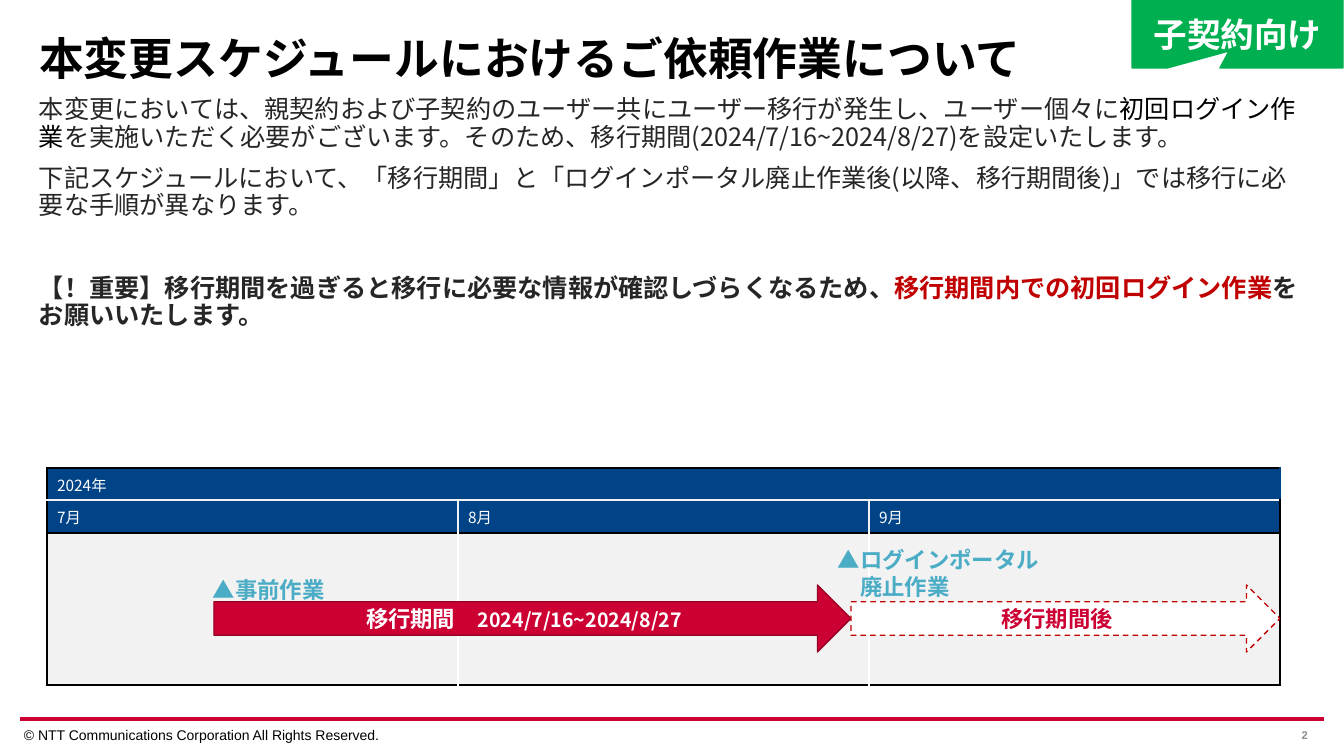
from lxml import etree
from pptx import Presentation
from pptx.dml.color import RGBColor
from pptx.enum.dml import MSO_LINE
from pptx.enum.shapes import MSO_CONNECTOR, MSO_SHAPE
from pptx.enum.text import MSO_ANCHOR, PP_ALIGN
from pptx.oxml.ns import qn
from pptx.util import Emu, Pt

PX = 914400 / 100.8
LEFT, CENTER, RIGHT = PP_ALIGN.LEFT, PP_ALIGN.CENTER, PP_ALIGN.RIGHT
TOP, MIDDLE = MSO_ANCHOR.TOP, MSO_ANCHOR.MIDDLE
ARROW, CALLOUT = MSO_SHAPE.RIGHT_ARROW, MSO_SHAPE.RECTANGULAR_CALLOUT
JP, LATIN = "Noto Sans CJK JP", "Arial"
BLACK, WHITE, GRAY, INK = "000000", "FFFFFF", "F2F2F2", "262626"
RED, DARK_RED, CRIMSON, BLUE, CYAN, GREEN = (
    "C00000", "970026", "CC0033", "004386", "4BACC6", "00B050")

# A span is (text, size, colour, bold).
TITLE = [[("本変更スケジュールにおけるご依頼作業について", 32, BLACK, True)]]
BODY = [
    [("本変更においては、親契約および子契約のユーザー共にユーザー移行が発生し、ユーザー個々に", 18, INK, False),
     ("初回ログイン作業", 18, BLACK, False),
     ("を実施いただく必要がございます。そのため、移行期間(2024/7/16~2024/8/27)を設定いたします。", 18, INK, False)],
    [("下記スケジュールにおいて、「移行期間」と「ログインポータル廃止作業後(以降、移行期間後)」"
      "では移行に必要な手順が異なります。", 18, INK, False)],
    [("【！重要】移行期間を過ぎると移行に必要な情報が確認しづらくなるため、", 18, INK, True),
     ("移行期間内での初回ログイン作業", 18, RED, True),
     ("をお願いいたします。", 18, INK, True)],
]
BODY_GAPS = [0, 10, 40]
YEAR, MONTHS = "2024年", ["7月", "8月", "9月"]
CALENDAR = (47, 468, 1233)
ROW_HEIGHTS = [32, 33, 152]

# preset, box, fill, line, dash, adjustments, spans
SHAPES = {
    "period": (ARROW, (214, 585, 637, 67), CRIMSON, DARK_RED, None, [],
               [("移行期間　", 16, WHITE, True), ("2024/7/16~2024/8/27", 14, WHITE, True)]),
    "after": (ARROW, (851, 585, 429, 67), WHITE, RED, MSO_LINE.DASH, [],
              [("移行期間後", 16, CRIMSON, True)]),
    "audience": (CALLOUT, (1132, 0, 211, 68), GREEN, GREEN, None, [-0.04, 0.25],
                 [("子契約向け", 24, WHITE, True)]),
}
MILESTONES = [
    ((828, 541, 224, 65), ["▲ログインポータル", "　廃止作業"]),
    ((203, 571, 133, 37), ["▲事前作業"]),
]
COPYRIGHT = [[("© NTT Communications Corporation All Rights Reserved.", 10, BLACK, False)]]
PAGE_NUMBER = [[("2", 8, "8C8C8C", True)]]


def px(*lengths):
    return [Emu(round(length * PX)) for length in lengths]


def color(value):
    return RGBColor.from_string(value)


def set_all(target, values):
    for name, value in values.items():
        setattr(target, name, value)


def write(frame, paragraphs, font=JP, align=LEFT, anchor=TOP, margins=(10, 5, 10, 5),
          wrap=True, spacing=1.0, gaps=None):
    left, top, right, bottom = px(*margins)
    set_all(frame, dict(margin_left=left, margin_top=top, margin_right=right,
                        margin_bottom=bottom, word_wrap=wrap, vertical_anchor=anchor))
    for index, spans in enumerate(paragraphs):
        para = frame.paragraphs[0] if index == 0 else frame.add_paragraph()
        set_all(para, dict(alignment=align, line_spacing=spacing,
                           space_before=Pt(gaps[index] if gaps else 0)))
        for text, size, ink, bold in spans:
            span = para.add_run()
            span.text = text
            set_all(span.font, dict(name=font, size=Pt(size), bold=bold))
            span.font.color.rgb = color(ink)
            east_asian = etree.SubElement(span.font._element, qn("a:ea"))
            east_asian.set("typeface", font)


def add_text(page, box, paragraphs, **layout):
    write(page.shapes.add_textbox(*px(*box)).text_frame, paragraphs, **layout)


def add_shape(page, preset, box, fill, line, dash, adjustments, spans):
    shape = page.shapes.add_shape(preset, *px(*box))
    shape.shadow.inherit = False
    for index, value in enumerate(adjustments):
        shape.adjustments[index] = value
    shape.fill.solid()
    shape.fill.fore_color.rgb = color(fill)
    shape.line.color.rgb = color(line)
    set_all(shape.line, dict(width=Pt(1), dash_style=dash))
    write(shape.text_frame, [spans], align=CENTER, anchor=MIDDLE,
          margins=(8, 8, 8, 8), wrap=preset == CALLOUT)


def format_cell(cell, fill, borders):
    """Fill a cell and draw its left, right, top and bottom borders, in that order."""
    properties = cell._tc.get_or_add_tcPr()
    for side, line in zip("LRTB", borders):
        border = etree.SubElement(properties, qn(f"a:ln{side}"), w=str(Pt(1)))
        solid = etree.SubElement(border, qn("a:solidFill"))
        etree.SubElement(solid, qn("a:srgbClr"), val=line)
    cell.fill.solid()
    cell.fill.fore_color.rgb = color(fill)


def add_calendar(page):
    left, top, width = CALENDAR
    count = len(MONTHS)
    box = px(left, top, width, sum(ROW_HEIGHTS))
    table = page.shapes.add_table(len(ROW_HEIGHTS), count, *box).table
    set_all(table, dict(first_row=False, horz_banding=False))
    for column in table.columns:
        column.width = px(width / count)[0]
    for row, height in zip(table.rows, px(*ROW_HEIGHTS)):
        row.height = height
    fills, dividers = [BLUE, BLUE, GRAY], [BLUE, GRAY, WHITE]
    levels = [BLACK, GRAY, BLACK, BLACK]
    texts = [[YEAR], MONTHS, []]
    for row in range(len(ROW_HEIGHTS)):
        edges = [BLACK] + [dividers[row]] * (count - 1) + [BLACK]
        for column in range(count):
            cell = table.cell(row, column)
            format_cell(cell, fills[row], edges[column:column + 2] + levels[row:row + 2])
            if column < len(texts[row]):
                write(cell.text_frame, [[(texts[row][column], 11, WHITE, False)]])
    table.cell(0, 0).merge(table.cell(0, count - 1))


def add_footer(page):
    rule = page.shapes.add_connector(MSO_CONNECTOR.STRAIGHT, *px(20, 719, 1324, 719))
    rule.line.color.rgb = color(CRIMSON)
    rule.line.width = Pt(3)
    etree.SubElement(rule._element.spPr, qn("a:effectLst"))
    add_text(page, (24, 727, 454, 17), COPYRIGHT, font=LATIN, margins=(0, 0, 0, 0))
    add_text(page, (1013, 719, 302, 31), PAGE_NUMBER, font=LATIN, align=RIGHT,
             anchor=MIDDLE, margins=(7, 0, 7, 0))


def main():
    deck = Presentation()
    deck.slide_width, deck.slide_height = px(1344, 756)
    page = deck.slides.add_slide(deck.slide_layouts[5])
    title = page.shapes.title
    set_all(title, dict(zip(("left", "top", "width", "height"), px(29, 29, 1159, 46))))
    write(title.text_frame, TITLE, margins=(10, 8, 10, 4), spacing=0.9)
    add_footer(page)
    add_text(page, (29, 92, 1282, 603), BODY, spacing=0.9, gaps=BODY_GAPS)
    add_calendar(page)
    add_shape(page, *SHAPES["period"])
    for box, lines in MILESTONES:
        add_text(page, box, [[(line, 16, CYAN, True)] for line in lines], wrap=False)
    add_shape(page, *SHAPES["after"])
    add_shape(page, *SHAPES["audience"])
    deck.save("out.pptx")


if __name__ == "__main__":
    main()
